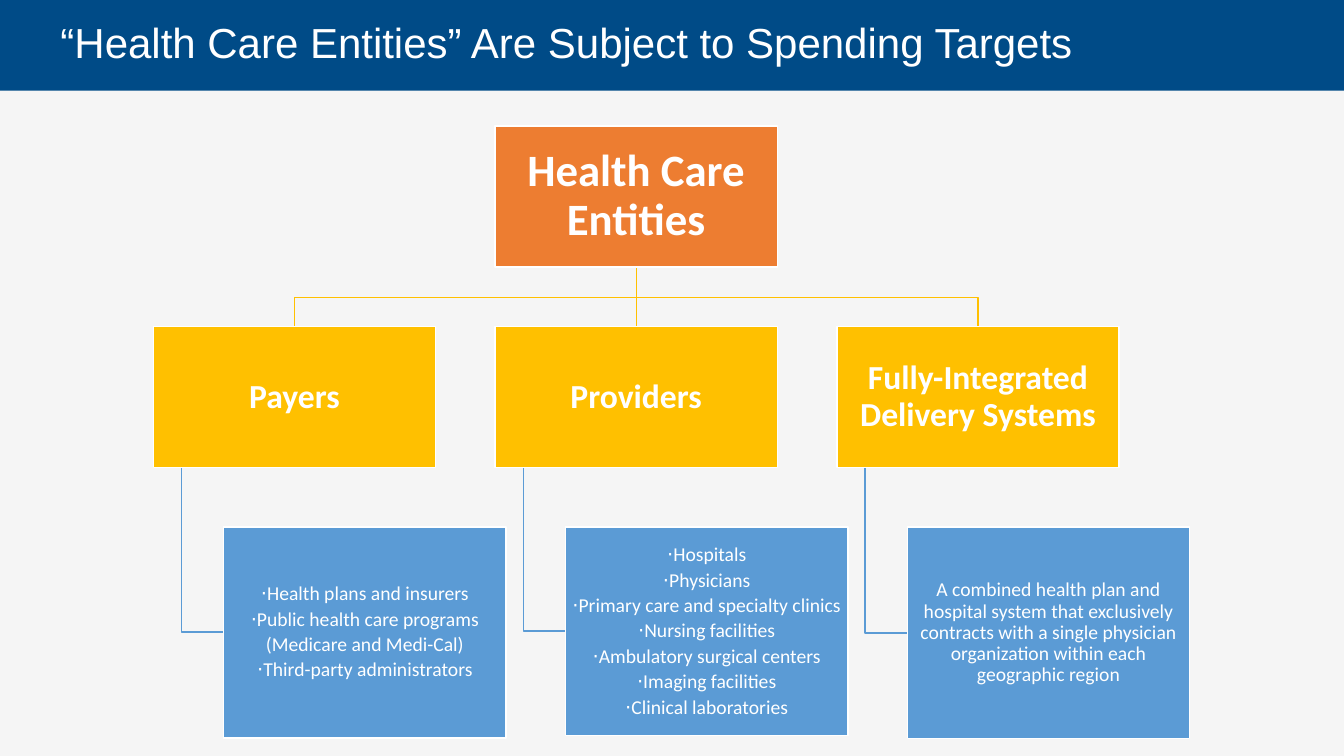
import pptx
import pptx.dml.color
import pptx.enum.shapes
import pptx.enum.text
import pptx.util
from dataclasses import dataclass
from lxml import etree
from pptx.oxml.ns import qn

EMU_PER_PX = 9144  # 100 px to the inch


@dataclass(frozen=True)
class Theme:
    white: str = "FFFFFF"
    panel: str = "F5F5F5"
    banner: str = "004B87"
    root: str = "ED7D31"
    branch: str = "FFC000"
    detail: str = "5B9BD5"
    title_font: str = "Arial"
    body_font: str = "Calibri"
    title_size: int = 30
    root_size: int = 32
    branch_size: int = 24
    detail_size: int = 14
    line_width: int = 1


@dataclass(frozen=True)
class Box:
    left: int
    top: int
    width: int
    height: int

    @property
    def center(self) -> int:
        return self.left + self.width // 2

    @property
    def middle(self) -> int:
        return self.top + self.height // 2

    @property
    def bottom(self) -> int:
        return self.top + self.height


@dataclass(frozen=True)
class Branch:
    name: str
    details: tuple[str, ...]
    detail_height: int


THEME = Theme()
SLIDE_WIDTH, SLIDE_HEIGHT = 1333, 750
BOX_WIDTH, BOX_HEIGHT = 280, 140
BRANCH_LEFT, BRANCH_TOP, BRANCH_PITCH = 152, 324, 339
DETAIL_TOP, DETAIL_INDENT, STEM_INDENT = 523, 70, 28
ROOT = Box(BRANCH_LEFT + BRANCH_PITCH, 125, BOX_WIDTH, BOX_HEIGHT)
BUS_Y = (ROOT.bottom + BRANCH_TOP) // 2 + 1

BRANCHES = (
    Branch("Payers", (
        "⋅Health plans and insurers",
        "⋅Public health care programs",
        "(Medicare and Medi-Cal)",
        "⋅Third-party administrators",
    ), 209),
    Branch("Providers", (
        "⋅Hospitals",
        "⋅Physicians",
        "⋅Primary care and specialty clinics",
        "⋅Nursing facilities",
        "⋅Ambulatory surgical centers",
        "⋅Imaging facilities",
        "⋅Clinical laboratories",
    ), 207),
    Branch("Fully-Integrated Delivery Systems", (
        "A combined health plan and hospital system that exclusively contracts "
        "with a single physician organization within each geographic region",
    ), 210),
)


def px(length: int) -> int:
    return pptx.util.Emu(length * EMU_PER_PX)


def rgb(color: str) -> pptx.dml.color.RGBColor:
    return pptx.dml.color.RGBColor.from_string(color)


def set_line(line, color: str) -> None:
    line.color.rgb = rgb(color)
    line.width = pptx.util.Pt(THEME.line_width)


def add_box(slide, box: Box, fill: str, outline: str | None = None):
    shape = slide.shapes.add_shape(
        pptx.enum.shapes.MSO_SHAPE.RECTANGLE,
        px(box.left), px(box.top), px(box.width), px(box.height))
    shape.shadow.inherit = False
    shape.fill.solid()
    shape.fill.fore_color.rgb = rgb(fill)
    if outline:
        set_line(shape.line, outline)
    else:
        shape.line.fill.background()
    return shape


def write_text(shape, lines: tuple[str, ...], *, size: int, font: str = THEME.body_font,
               bold: bool = False, centered: bool = True, inset: int = 2,
               left_inset: int | None = None, space_after: int = 0) -> None:
    frame = shape.text_frame
    frame.word_wrap = True
    frame.vertical_anchor = pptx.enum.text.MSO_ANCHOR.MIDDLE
    frame.margin_left = px(inset if left_inset is None else left_inset)
    frame.margin_right = frame.margin_top = frame.margin_bottom = px(inset)
    frame.text = "\n".join(lines)
    align = pptx.enum.text.PP_ALIGN
    for paragraph in frame.paragraphs:
        paragraph.alignment = align.CENTER if centered else align.LEFT
        paragraph.line_spacing = 0.9
        paragraph.space_after = pptx.util.Pt(space_after)
        paragraph.font.name = font
        paragraph.font.size = pptx.util.Pt(size)
        paragraph.font.bold = bold
        paragraph.font.color.rgb = rgb(THEME.white)


def add_path(slide, points: list[tuple[int, int]], color: str) -> None:
    builder = slide.shapes.build_freeform(*points[0], scale=EMU_PER_PX)
    builder.add_line_segments(points[1:], close=False)
    shape = builder.convert_to_shape()
    shape.shadow.inherit = False
    shape.fill.background()
    set_line(shape.line, color)


def add_straight(slide, start: tuple[int, int], end: tuple[int, int], color: str) -> None:
    connector = slide.shapes.add_connector(
        pptx.enum.shapes.MSO_CONNECTOR.STRAIGHT,
        px(start[0]), px(start[1]), px(end[0]), px(end[1]))
    set_line(connector.line, color)
    etree.SubElement(connector.element.spPr, qn("a:effectLst"))


def add_branch(slide, branch: Branch, index: int) -> None:
    head = Box(BRANCH_LEFT + index * BRANCH_PITCH, BRANCH_TOP, BOX_WIDTH, BOX_HEIGHT)
    detail = Box(head.left + DETAIL_INDENT, DETAIL_TOP, BOX_WIDTH, branch.detail_height)
    stem = head.left + STEM_INDENT

    # Lines from the root and down to the details
    start, end = (ROOT.center, ROOT.bottom), (head.center, head.top)
    if head.center == ROOT.center:
        add_straight(slide, start, end, THEME.branch)
    else:
        add_path(slide, [start, (ROOT.center, BUS_Y), (head.center, BUS_Y), end],
                 THEME.branch)
    add_path(slide, [(stem, head.bottom), (stem, detail.middle),
                     (detail.left, detail.middle)], THEME.detail)

    # Boxes
    write_text(add_box(slide, head, THEME.branch, THEME.white), (branch.name,),
               size=THEME.branch_size, bold=True)
    write_text(add_box(slide, detail, THEME.detail, THEME.white), branch.details,
               size=THEME.detail_size, inset=1, space_after=3)


def main() -> None:
    presentation = pptx.Presentation()
    presentation.slide_width = px(SLIDE_WIDTH)
    presentation.slide_height = px(SLIDE_HEIGHT)
    slide = presentation.slides.add_slide(presentation.slide_layouts[6])

    # Background panel and title banner
    add_box(slide, Box(0, 68, SLIDE_WIDTH, SLIDE_HEIGHT - 68), THEME.panel)
    banner = add_box(slide, Box(0, 0, SLIDE_WIDTH, 90), THEME.banner)
    write_text(banner, ("“Health Care Entities” Are Subject to Spending Targets",),
               size=THEME.title_size, font=THEME.title_font, centered=False,
               inset=10, left_inset=60)

    # Hierarchy
    for index, branch in enumerate(BRANCHES):
        add_branch(slide, branch, index)
    write_text(add_box(slide, ROOT, THEME.root, THEME.white), ("Health Care Entities",),
               size=THEME.root_size, bold=True)

    presentation.save("out.pptx")


if __name__ == "__main__":
    main()
